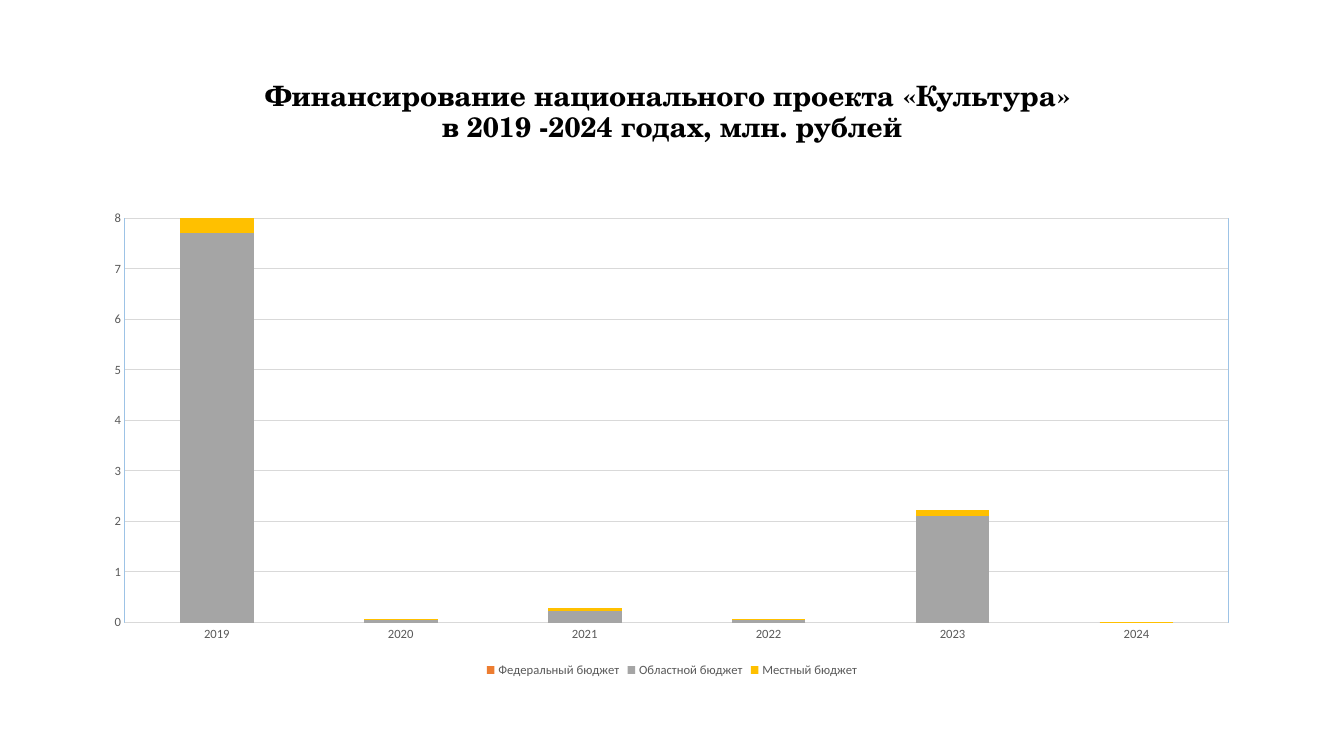
from dataclasses import dataclass

from lxml.etree import SubElement
from pptx import Presentation
from pptx.chart.axis import CategoryAxis, ValueAxis
from pptx.chart.chart import Chart
from pptx.chart.data import CategoryChartData
from pptx.dml.color import RGBColor
from pptx.enum.chart import XL_CHART_TYPE, XL_LEGEND_POSITION, XL_TICK_MARK
from pptx.enum.text import MSO_ANCHOR, PP_ALIGN
from pptx.oxml import parse_xml
from pptx.oxml.ns import nsdecls, qn
from pptx.slide import Slide
from pptx.text.text import Font
from pptx.util import Emu, Pt

EMU_PER_PX = 9525


@dataclass(frozen=True)
class Theme:
    title_font: str = "TeX Gyre Schola"
    chart_font: str = "Calibri"
    title_size: int = 20
    chart_size: int = 10
    label_size: int = 9
    line_width: float = 0.75
    title_color: str = "000000"
    label_color: str = "595959"
    grid_color: str = "D9D9D9"
    frame_color: str = "9DC3E6"


@dataclass(frozen=True)
class Box:
    left: int
    top: int
    width: int
    height: int

    def emu(self) -> tuple[Emu, ...]:
        return tuple(px(value) for value in (self.left, self.top, self.width, self.height))


@dataclass(frozen=True)
class Budget:
    name: str
    values: tuple[float, ...]
    color: str


THEME = Theme()
TITLE_BOX = Box(88, 38, 1104, 139)
CHART_BOX = Box(88, 192, 1104, 457)
PLOT_BOX = Box(119, 208, 1051, 385)
TITLE = "Финансирование национального проекта «Культура» \vв 2019 -2024 годах, млн. рублей"
YEARS = [str(year) for year in range(2019, 2025)]
BUDGETS = (
    Budget("Федеральный бюджет", (0, 0, 0, 0, 0, 0), "ED7D31"),
    Budget("Областной бюджет", (7.7, 0.05, 0.22, 0.05, 2.1, 0), "A5A5A5"),
    Budget("Местный бюджет", (0.4, 0.02, 0.07, 0.02, 0.12, 0.01), "FFC000"),
)


def px(value: int) -> Emu:
    return Emu(value * EMU_PER_PX)


def style_font(font: Font, name: str, size: int, color: str, bold: bool = False) -> None:
    font.name = name
    font.size = Pt(size)
    font.bold = bold
    font.color.rgb = RGBColor.from_string(color)


def add_title(slide: Slide) -> None:
    text_frame = slide.shapes.add_textbox(*TITLE_BOX.emu()).text_frame
    text_frame.word_wrap = True
    text_frame.vertical_anchor = MSO_ANCHOR.MIDDLE
    text_frame.text = TITLE
    paragraph = text_frame.paragraphs[0]
    paragraph.alignment = PP_ALIGN.CENTER
    paragraph.line_spacing = 0.9
    for run in paragraph.runs:
        style_font(run.font, THEME.title_font, THEME.title_size, THEME.title_color, True)


def style_axis(axis: CategoryAxis | ValueAxis) -> None:
    axis.major_tick_mark = XL_TICK_MARK.NONE
    axis.minor_tick_mark = XL_TICK_MARK.NONE
    style_font(axis.tick_labels.font, THEME.chart_font, THEME.label_size, THEME.label_color)


def frame_plot(chart: Chart) -> None:
    plot_area = chart.element.find(f".//{qn('c:plotArea')}")
    for old_layout in plot_area.findall(qn("c:layout")):
        plot_area.remove(old_layout)
    layout = parse_xml(f"<c:layout {nsdecls('c')}><c:manualLayout/></c:layout>")
    plot_area.insert(0, layout)
    settings = {
        "layoutTarget": "inner",
        "xMode": "edge",
        "yMode": "edge",
        "x": (PLOT_BOX.left - CHART_BOX.left) / CHART_BOX.width,
        "y": (PLOT_BOX.top - CHART_BOX.top) / CHART_BOX.height,
        "w": PLOT_BOX.width / CHART_BOX.width,
        "h": PLOT_BOX.height / CHART_BOX.height,
    }
    for tag, value in settings.items():
        SubElement(layout[0], qn(f"c:{tag}")).set("val", str(value))
    plot_area.append(parse_xml(
        f"<c:spPr {nsdecls('c', 'a')}><a:noFill/><a:ln w='{Pt(THEME.line_width)}'><a:solidFill>"
        f"<a:srgbClr val='{THEME.frame_color}'/></a:solidFill></a:ln></c:spPr>"
    ))


def add_budget_chart(slide: Slide) -> None:
    data = CategoryChartData()
    data.categories = YEARS
    for budget in BUDGETS:
        data.add_series(budget.name, budget.values)
    chart = slide.shapes.add_chart(XL_CHART_TYPE.COLUMN_STACKED, *CHART_BOX.emu(), data).chart
    style_font(chart.font, THEME.chart_font, THEME.chart_size, THEME.title_color)
    chart.has_title = False

    plot = chart.plots[0]
    plot.vary_by_categories = False
    plot.gap_width = 150
    plot.overlap = 100
    for series, budget in zip(plot.series, BUDGETS):
        series.format.fill.solid()
        series.format.fill.fore_color.rgb = RGBColor.from_string(budget.color)

    category_axis, value_axis = chart.category_axis, chart.value_axis
    style_axis(category_axis)
    style_axis(value_axis)
    value_axis.minimum_scale = 0
    value_axis.maximum_scale = 8
    value_axis.major_unit = 1
    value_axis.format.line.fill.background()
    for line in (category_axis.format.line, value_axis.major_gridlines.format.line):
        line.color.rgb = RGBColor.from_string(THEME.grid_color)
        line.width = Pt(THEME.line_width)

    chart.has_legend = True
    chart.legend.position = XL_LEGEND_POSITION.BOTTOM
    chart.legend.include_in_layout = False
    style_font(chart.legend.font, THEME.chart_font, THEME.label_size, THEME.label_color)
    frame_plot(chart)


def main() -> None:
    presentation = Presentation()
    presentation.slide_width = px(1280)
    presentation.slide_height = px(720)
    slide = presentation.slides.add_slide(presentation.slide_layouts[6])
    add_title(slide)
    add_budget_chart(slide)
    presentation.save("out.pptx")


if __name__ == "__main__":
    main()
